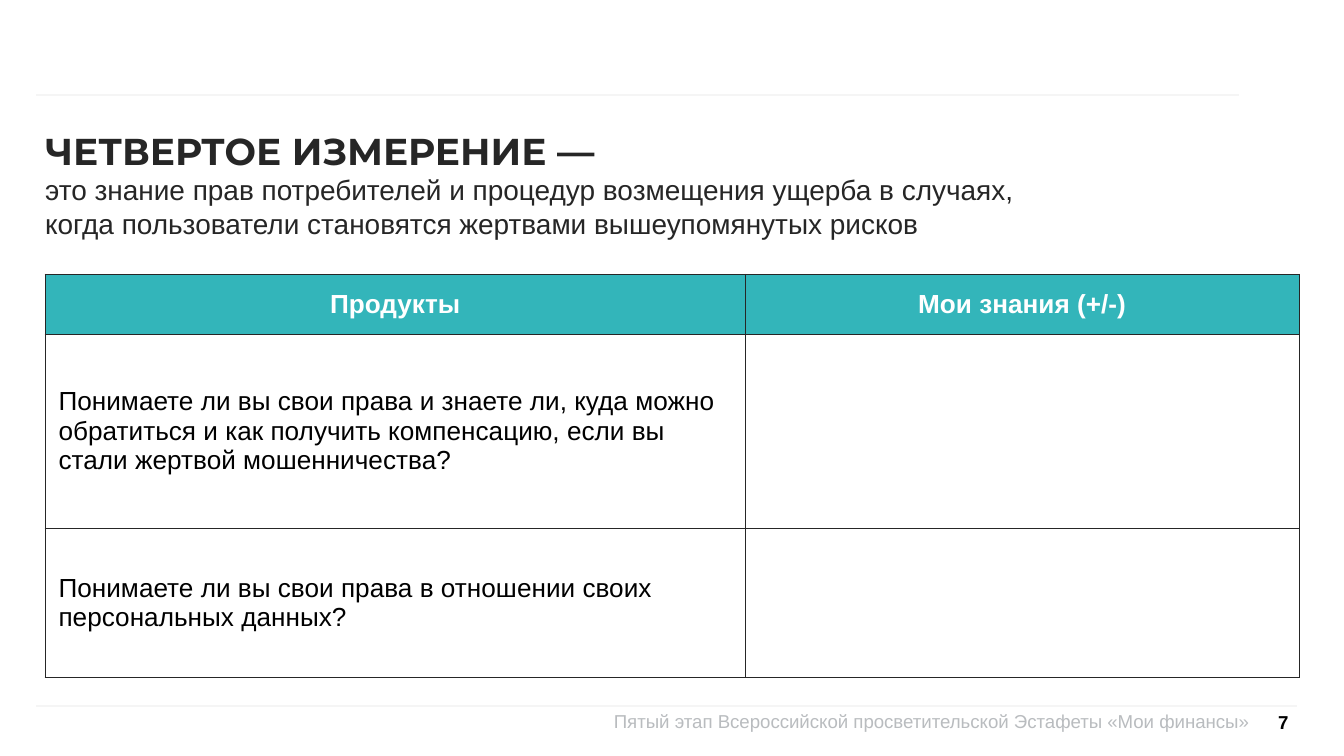
import dataclasses

import lxml.etree
import pptx
import pptx.dml.color
import pptx.enum.shapes
import pptx.enum.text
import pptx.oxml
import pptx.oxml.ns
import pptx.util

ALIGN = pptx.enum.text.PP_ALIGN
ANCHOR = pptx.enum.text.MSO_ANCHOR
qn = pptx.oxml.ns.qn


@dataclasses.dataclass(frozen=True)
class Theme:
    ink: str = "262626"
    black: str = "000000"
    white: str = "FFFFFF"
    teal: str = "33B5BA"
    rule: str = "F5F5F5"
    muted: str = "B9BCBF"
    heading_font: str = "Montserrat"
    body_font: str = "Arial"
    heading: int = 20
    lead: int = 15
    cell: int = 14
    small: int = 10
    border: float = 0.5


def rgb(value):
    return pptx.dml.color.RGBColor.from_string(value)


def write(paragraph, text, *, size, color, font=Theme.body_font, bold=False,
          align=ALIGN.LEFT):
    paragraph.alignment = align
    run = paragraph.add_run()
    run.text = text
    run.font.name = font
    run.font.size = pptx.util.Pt(size)
    run.font.bold = bold
    run.font.color.rgb = rgb(color)


class SlideBuilder:
    def __init__(self, deck, theme):
        self.theme = theme
        self.slide = deck.slides.add_slide(deck.slide_layouts[6])
        self.width, self.height = deck.slide_width, deck.slide_height

    def x(self, percent):
        return round(self.width * percent / 100)

    def y(self, percent):
        return round(self.height * percent / 100)

    def box(self, left, top, width, height):
        return self.x(left), self.y(top), self.x(width), self.y(height)

    def rule(self, left, right, top):
        line = self.slide.shapes.add_connector(
            pptx.enum.shapes.MSO_CONNECTOR.STRAIGHT,
            self.x(left), self.y(top), self.x(right), self.y(top))
        line.line.color.rgb = rgb(self.theme.rule)
        line.line.width = pptx.util.Pt(1)
        lxml.etree.SubElement(line._element.spPr, qn("a:effectLst"))

    def text(self, place, paragraphs, inset=0, wrap=True, anchor=ANCHOR.TOP):
        frame = self.slide.shapes.add_textbox(*self.box(*place)).text_frame
        frame.word_wrap = wrap
        frame.vertical_anchor = anchor
        margin = pptx.util.Inches(inset)
        frame.margin_left = frame.margin_right = margin
        frame.margin_top = frame.margin_bottom = margin
        for index, (content, style) in enumerate(paragraphs):
            paragraph = frame.add_paragraph() if index else frame.paragraphs[0]
            write(paragraph, content, **style)

    def border(self, cell):
        properties = cell._tc.get_or_add_tcPr()
        for index, side in enumerate(("lnL", "lnR", "lnT", "lnB")):
            edge = lxml.etree.Element(
                qn(f"a:{side}"), w=str(pptx.util.Pt(self.theme.border)))
            fill = lxml.etree.SubElement(edge, qn("a:solidFill"))
            lxml.etree.SubElement(fill, qn("a:srgbClr"), val=self.theme.ink)
            properties.insert(index, edge)

    def table(self, left, top, columns, rows, contents):
        theme = self.theme
        place = self.box(left, top, sum(columns), sum(rows))
        table = self.slide.shapes.add_table(len(rows), len(columns), *place).table
        table.horz_banding = False
        for column, width in zip(table.columns, columns):
            column.width = self.x(width)
        for row, height in zip(table.rows, rows):
            row.height = self.y(height)
        header = dict(size=theme.cell, color=theme.white, bold=True, align=ALIGN.CENTER)
        body = dict(size=theme.cell, color=theme.black)
        for r, line in enumerate(contents):
            for c, content in enumerate(line):
                cell = table.cell(r, c)
                cell.vertical_anchor = ANCHOR.MIDDLE
                if r == 0:
                    cell.fill.solid()
                    cell.fill.fore_color.rgb = rgb(theme.teal)
                else:
                    cell.fill.background()
                self.border(cell)
                if content:
                    write(cell.text_frame.paragraphs[0], content,
                          **(body if r else header))


def main():
    deck = pptx.Presentation()
    deck.slide_width = pptx.util.Inches(10)
    deck.slide_height = deck.slide_width * 9 // 16
    theme = Theme()
    page = SlideBuilder(deck, theme)

    page.rule(2.7, 92.2, 12.6)
    page.rule(2.7, 96.5, 93.4)
    page.text((35.8, 93.87, 57.1, 6.2), [
        ("Пятый этап Всероссийской просветительской Эстафеты «Мои финансы»",
         dict(size=theme.small, color=theme.muted, align=ALIGN.RIGHT)),
    ])
    page.table(3.36, 36.3, (52.1, 41.2), (7.9, 25.7, 19.7), [
        ("Продукты", "Мои знания (+/-)"),
        ("Понимаете ли вы свои права и знаете ли, куда можно обратиться "
         "и как получить компенсацию, если вы стали жертвой мошенничества?", ""),
        ("Понимаете ли вы свои права в отношении своих персональных данных?", ""),
    ])
    page.text((94.5, 93, 1.9, 5), [
        ("7", dict(size=theme.small, color=theme.black, bold=True, align=ALIGN.RIGHT)),
    ], inset=0.06, wrap=False, anchor=ANCHOR.MIDDLE)
    page.text((3.36, 16.9, 75.9, 10), [
        ("ЧЕТВЕРТОЕ ИЗМЕРЕНИЕ —",
         dict(size=theme.heading, color=theme.ink, font=theme.heading_font, bold=True)),
        ("это знание прав потребителей и процедур возмещения ущерба в случаях, "
         "когда пользователи становятся жертвами вышеупомянутых рисков",
         dict(size=theme.lead, color=theme.ink)),
    ])
    deck.save("out.pptx")


if __name__ == "__main__":
    main()
